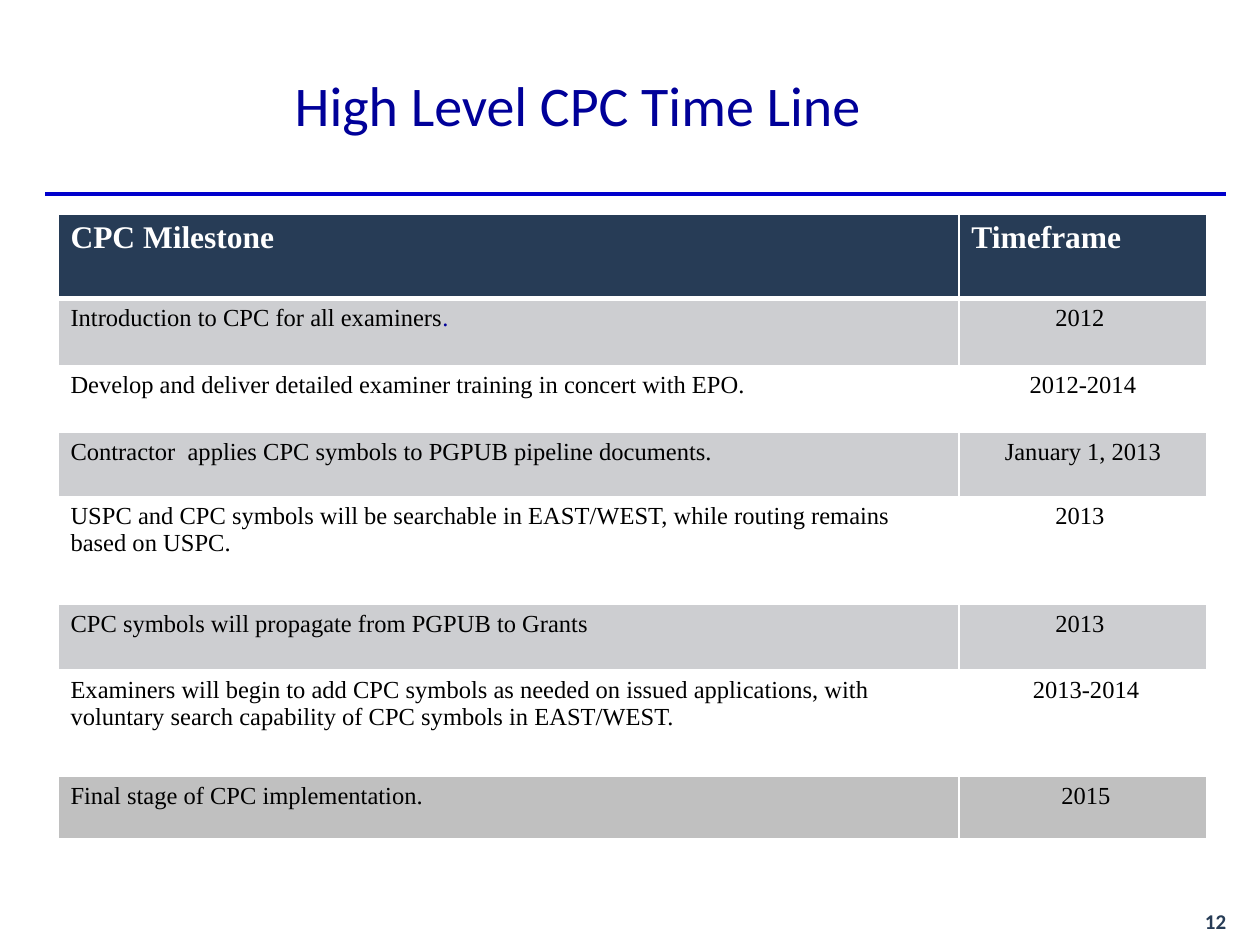
"""Build the CPC time line slide: a title, a rule and a milestone table."""
import dataclasses

import lxml.etree
import pptx
import pptx.dml.color
import pptx.enum.shapes
import pptx.enum.text
import pptx.oxml.ns
import pptx.util

RGBColor = pptx.dml.color.RGBColor
ALIGN = pptx.enum.text.PP_ALIGN
ANCHOR = pptx.enum.text.MSO_ANCHOR

NAVY = RGBColor(0x27, 0x3C, 0x56)
RULE_BLUE = RGBColor(0x00, 0x00, 0xCC)
TITLE_BLUE = RGBColor(0x00, 0x00, 0x99)
BAND_GREY = RGBColor(0xCD, 0xCE, 0xD1)
FINAL_GREY = RGBColor(0xC0, 0xC0, 0xC0)
WHITE = RGBColor(0xFF, 0xFF, 0xFF)
BLACK = RGBColor(0x00, 0x00, 0x00)

SLIDE_WIDTH = pptx.util.Inches(10)
SLIDE_HEIGHT = pptx.util.Inches(7.5)
GRID_COLUMNS, GRID_ROWS = 100, 75
MILESTONE_COLUMNS = (71.5, 19.7)
HEADER_ROWS = 6.7


@dataclasses.dataclass(frozen=True)
class Style:
    size: float
    color: RGBColor
    font: str = "Times New Roman"
    bold: bool = False
    align: ALIGN = ALIGN.LEFT


@dataclasses.dataclass(frozen=True)
class Milestone:
    task: str
    timeframe: str
    rows: float
    fill: RGBColor
    blue_ending: str = ""


HEADER = Style(18, WHITE, bold=True)
TASK = Style(14, BLACK)
TIMEFRAME = Style(14, BLACK, align=ALIGN.CENTER)
TITLE = Style(32, TITLE_BLUE, "Calibri")
PAGE_NUMBER = Style(12, NAVY, "Calibri", True, ALIGN.RIGHT)

MILESTONES = (
    Milestone("Introduction to CPC for all examiners", "2012 ", 5.3, BAND_GREY, "."),
    Milestone("Develop and deliver detailed examiner training in concert with EPO.",
              "2012-2014", 5.3, WHITE),
    Milestone("Contractor  applies CPC symbols to PGPUB pipeline documents.",
              "January 1, 2013", 5.1, BAND_GREY),
    Milestone("USPC and CPC symbols will be searchable in EAST/WEST, while routing "
              "remains based on USPC.", "2013 ", 8.6, WHITE),
    Milestone("CPC symbols will propagate from PGPUB to Grants", "2013 ", 5.2, BAND_GREY),
    Milestone("Examiners will begin to add CPC symbols as needed on issued applications, "
              "with  voluntary search capability of CPC symbols in EAST/WEST.",
              " 2013-2014", 8.4, WHITE),
    Milestone("Final stage of CPC implementation.", " 2015", 5, FINAL_GREY),
)


def across(columns: float) -> int:
    """Return the width of a number of grid columns."""
    return round(SLIDE_WIDTH * columns / GRID_COLUMNS)


def down(rows: float) -> int:
    """Return the height of a number of grid rows."""
    return round(SLIDE_HEIGHT * rows / GRID_ROWS)


def write(frame, text: str, style: Style) -> None:
    """Write one styled paragraph."""
    paragraph = frame.paragraphs[0]
    paragraph.add_run().text = text
    paragraph.alignment = style.align
    paragraph.font.name = style.font
    paragraph.font.size = pptx.util.Pt(style.size)
    paragraph.font.bold = style.bold
    paragraph.font.color.rgb = style.color
    paragraph.runs[0].font.color.rgb = style.color


def add_label(slide, left: float, top: float, width: float, height: float,
              text: str, style: Style, anchor: ANCHOR = ANCHOR.TOP):
    """Add a text box placed on the grid and return its frame."""
    frame = slide.shapes.add_textbox(
        across(left), down(top), across(width), down(height)).text_frame
    frame.word_wrap = True
    frame.vertical_anchor = anchor
    write(frame, text, style)
    return frame


def add_rule(slide, left: float, right: float, top: float) -> None:
    """Add the horizontal rule below the title."""
    rule = slide.shapes.add_connector(
        pptx.enum.shapes.MSO_CONNECTOR.STRAIGHT,
        across(left), down(top), across(right), down(top))
    rule.line.color.rgb = RULE_BLUE
    rule.line.width = pptx.util.Pt(2.25)
    lxml.etree.SubElement(rule._element.spPr, pptx.oxml.ns.qn("a:effectLst"))


def fill_cell(cell, text: str, style: Style, fill: RGBColor,
              top: float = 1, bottom: float = 1) -> None:
    """Fill a cell with text, colour and white borders."""
    write(cell.text_frame, text, style)
    cell.fill.solid()
    cell.fill.fore_color.rgb = fill
    properties = cell._tc.get_or_add_tcPr()
    borders = (("a:lnL", 1), ("a:lnR", 1), ("a:lnT", top), ("a:lnB", bottom))
    for index, (tag, points) in enumerate(borders):
        border = lxml.etree.Element(pptx.oxml.ns.qn(tag), w=str(pptx.util.Pt(points)))
        solid = lxml.etree.SubElement(border, pptx.oxml.ns.qn("a:solidFill"))
        lxml.etree.SubElement(solid, pptx.oxml.ns.qn("a:srgbClr"), val=str(WHITE))
        properties.insert(index, border)


def add_milestones(slide, left: float, top: float) -> None:
    """Add the table of milestones and timeframes."""
    heights = (HEADER_ROWS, *(milestone.rows for milestone in MILESTONES))
    table = slide.shapes.add_table(
        len(heights), len(MILESTONE_COLUMNS), across(left), down(top),
        across(sum(MILESTONE_COLUMNS)), down(sum(heights))).table
    for column, width in zip(table.columns, MILESTONE_COLUMNS):
        column.width = across(width)
    for row, height in zip(table.rows, heights):
        row.height = down(height)
    for column, heading in enumerate(("CPC Milestone", "Timeframe")):
        fill_cell(table.cell(0, column), heading, HEADER, NAVY, bottom=3)
    for row, milestone in enumerate(MILESTONES, 1):
        top_border = 3 if row == 1 else 1
        task = table.cell(row, 0)
        fill_cell(task, milestone.task, TASK, milestone.fill, top_border)
        fill_cell(table.cell(row, 1), milestone.timeframe, TIMEFRAME,
                  milestone.fill, top_border)
        if milestone.blue_ending:
            ending = task.text_frame.paragraphs[0].add_run()
            ending.text = milestone.blue_ending
            ending.font.color.rgb = TITLE_BLUE


def main() -> None:
    """Build and save the slide."""
    presentation = pptx.Presentation()
    presentation.slide_width = SLIDE_WIDTH
    presentation.slide_height = SLIDE_HEIGHT
    slide = presentation.slides.add_slide(presentation.slide_layouts[6])
    add_rule(slide, 3.6, 97.3, 15.4)
    number = add_label(slide, 77.5, 69.2, 20.8, 5, "12", PAGE_NUMBER, ANCHOR.BOTTOM)
    number.margin_bottom = down(0.1)
    add_label(slide, 22.4, 5.1, 49.9, 6.7, "High Level CPC Time Line", TITLE)
    add_milestones(slide, 4.6, 17)
    presentation.save("out.pptx")


if __name__ == "__main__":
    main()
